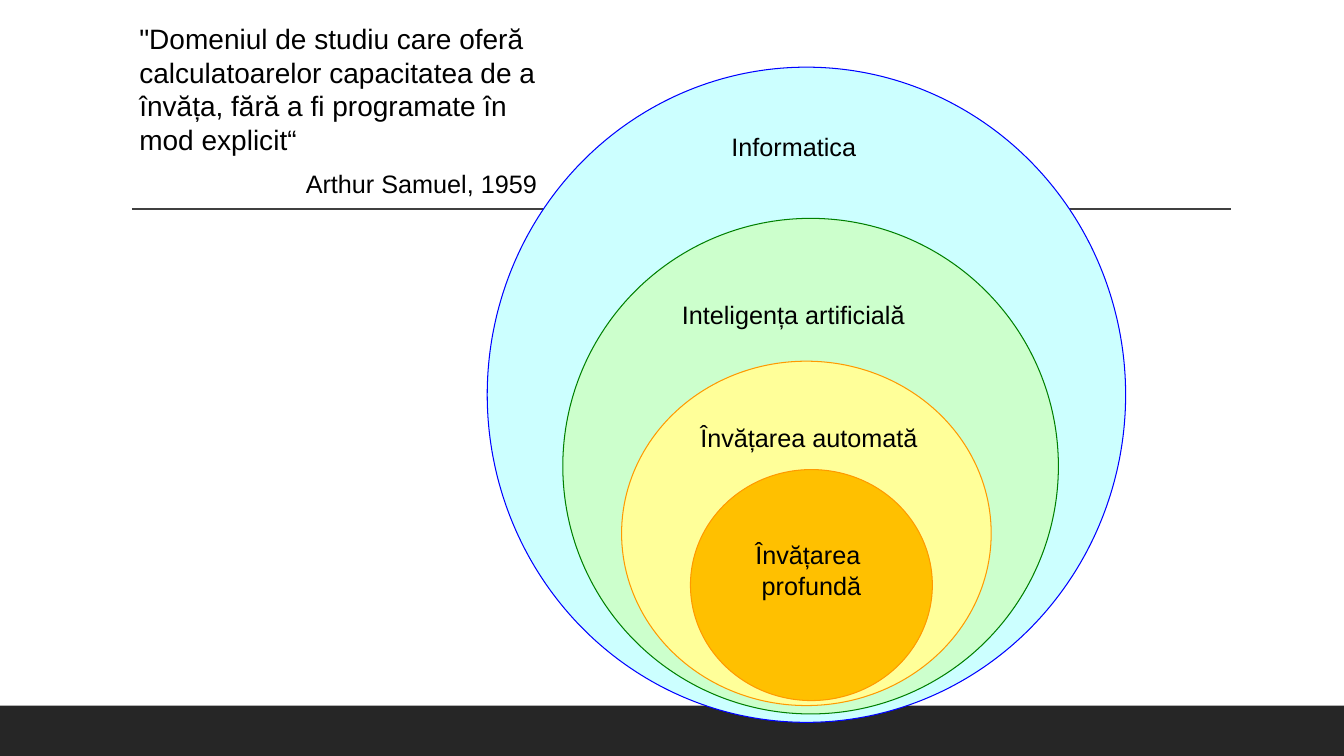
"""Build a slide of nested circles that places deep learning within computer science."""
from dataclasses import dataclass
from typing import Optional

from lxml.etree import SubElement as SubEl
from pptx import Presentation
from pptx.dml.color import RGBColor as Rgb
from pptx.enum.shapes import MSO_CONNECTOR as Conn, MSO_SHAPE as Kind
from pptx.enum.text import MSO_ANCHOR as Anchor, PP_ALIGN as Align
from pptx.oxml.ns import qn
from pptx.util import Inches, Pt

WIDE, HIGH = 13.33, 7.5
COLS, ROWS = 160, 90


@dataclass(frozen=True)
class Theme:
    """Colours, font and type sizes."""
    font: str = "Arial"
    ink: str = "000000"
    bar: str = "262626"
    rule: str = "404040"
    body: int = 18
    quote: int = 20
    gap: int = 9
    thin: float = 0.75


@dataclass(frozen=True)
class Box:
    """A place on the grid, in columns and rows."""
    col: float
    row: float
    cols: float
    rows: float

    def place(self) -> tuple[int, int, int, int]:
        """Return left, top, width and height as lengths."""
        x, y = WIDE / COLS, HIGH / ROWS
        return (Inches(self.col * x), Inches(self.row * y),
                Inches(self.cols * x), Inches(self.rows * y))


@dataclass(frozen=True)
class Line:
    """A paragraph with its size and alignment."""
    text: str
    size: int
    align: Align = Align.LEFT


@dataclass(frozen=True)
class Disc:
    """One field of study drawn as an ellipse."""
    box: Box
    fill: str
    edge: str


@dataclass(frozen=True)
class Label:
    """A block of text at a place."""
    box: Box
    lines: tuple[Line, ...]


THEME = Theme()
BAR = Box(0, 84, 160, 6)
RULE = Box(15.7, 24.9, 130.8, 0)
DISCS = (
    Disc(Box(58, 8, 76, 78), "CCFFFF", "0000FF"),
    Disc(Box(67, 26, 59, 59), "CCFFCC", "008000"),
    Disc(Box(74, 43, 44, 41), "FFFF99", "FF9900"),
)
CORE = Disc(Box(82.2, 55.9, 28.8, 27.5), "FFC000", "FF9900")
DEEP = (Line("Învățarea ", THEME.body, Align.CENTER),
        Line("profundă", THEME.body, Align.CENTER))
LABELS = (
    Label(Box(80, 15.1, 29, 4.8), (Line("Informatica", THEME.body, Align.CENTER),)),
    Label(Box(80, 35, 30, 4.8), (Line("Inteligența artificială", THEME.body),)),
    Label(Box(82.2, 49.7, 31, 4.8), (Line("Învățarea automată", THEME.body),)),
    Label(Box(15.4, 2, 49.7, 22.8), (
        Line('"Domeniul de studiu care oferă calculatoarelor capacitatea de a '
             'învăța, fără a fi programate în mod explicit“', THEME.quote),
        Line("Arthur Samuel, 1959", THEME.body, Align.RIGHT))),
)


def draw(slide, kind: Kind, box: Box, fill: str, edge: Optional[str] = None):
    """Add a filled shape with an optional outline."""
    shape = slide.shapes.add_shape(kind, *box.place())
    shape.shadow.inherit = False
    shape.fill.solid()
    shape.fill.fore_color.rgb = Rgb.from_string(fill)
    if edge:
        shape.line.color.rgb = Rgb.from_string(edge)
        shape.line.width = Pt(THEME.thin)
    else:
        shape.line.fill.background()
    return shape


def rule(slide, box: Box) -> None:
    """Add the level line behind the circles."""
    x, y, w, h = box.place()
    line = slide.shapes.add_connector(Conn.STRAIGHT, x, y, x + w, y + h)
    line.line.color.rgb = Rgb.from_string(THEME.rule)
    line.line.width = Pt(1)
    SubEl(line._element.spPr, qn("a:effectLst"))


def write(frame, lines: tuple[Line, ...], gap: int = 0) -> None:
    """Fill a text frame with formatted paragraphs."""
    frame.text = "\n".join(line.text for line in lines)
    for i, (para, line) in enumerate(zip(frame.paragraphs, lines)):
        para.alignment = line.align
        para.space_before = Pt(gap if i else 0)
        for run in para.runs:
            run.font.name = THEME.font
            run.font.size = Pt(line.size)
            run.font.color.rgb = Rgb.from_string(THEME.ink)


def main() -> None:
    """Build and save the slide."""
    deck = Presentation()
    deck.slide_width, deck.slide_height = Inches(WIDE), Inches(HIGH)
    slide = deck.slides.add_slide(deck.slide_layouts[6])
    draw(slide, Kind.RECTANGLE, BAR, THEME.bar)
    rule(slide, RULE)
    for disc in DISCS:
        draw(slide, Kind.OVAL, disc.box, disc.fill, disc.edge)
    for label in LABELS:
        frame = slide.shapes.add_textbox(*label.box.place()).text_frame
        frame.word_wrap = True
        write(frame, label.lines, THEME.gap)
    frame = draw(slide, Kind.OVAL, CORE.box, CORE.fill, CORE.edge).text_frame
    frame.word_wrap = False
    frame.vertical_anchor = Anchor.MIDDLE
    frame.margin_bottom = Inches(0.35)
    write(frame, DEEP)
    deck.save("out.pptx")


if __name__ == "__main__":
    main()
